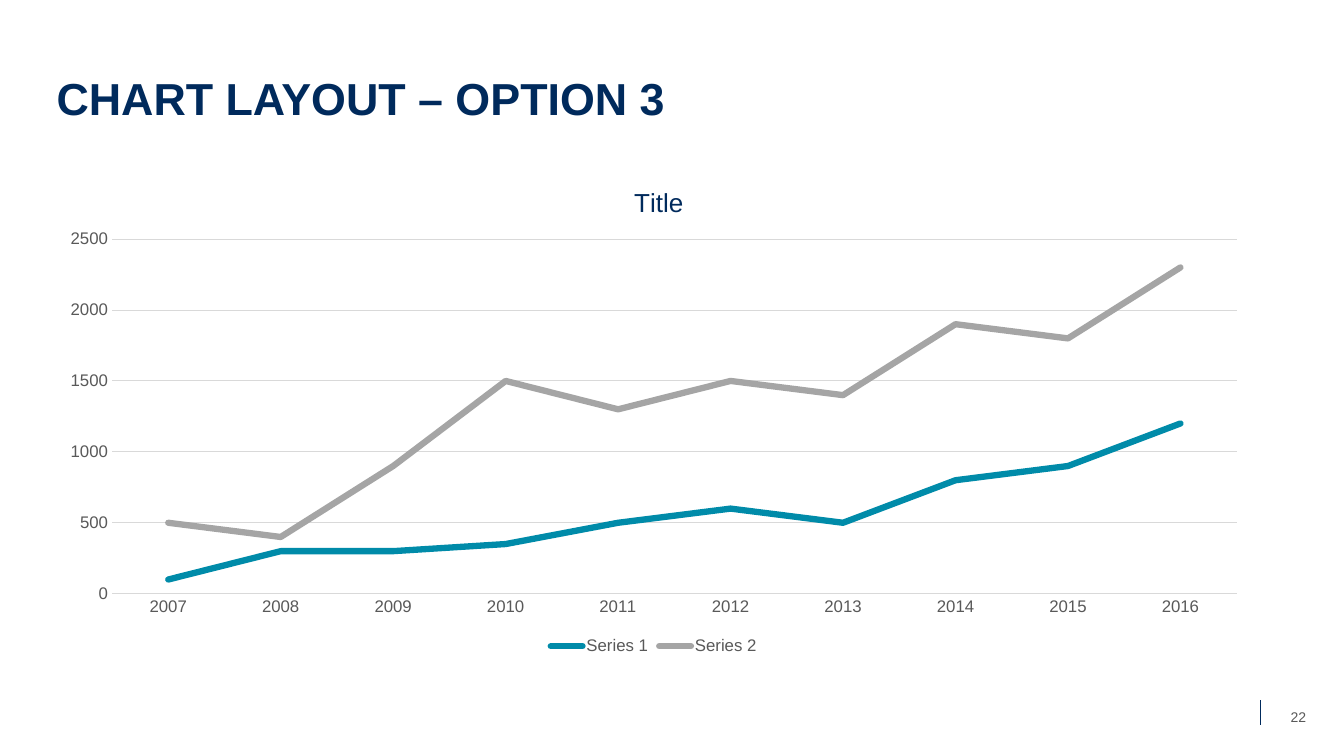
from lxml.etree import SubElement
from pptx import Presentation
from pptx.chart.data import CategoryChartData
from pptx.dml.color import RGBColor
from pptx.enum.chart import XL_CHART_TYPE as ChartType, XL_LEGEND_POSITION as LegendSide
from pptx.enum.chart import XL_MARKER_STYLE as Marker, XL_TICK_MARK as Tick
from pptx.enum.shapes import MSO_CONNECTOR as Connector
from pptx.enum.text import MSO_ANCHOR as Anchor, PP_ALIGN as Align
from pptx.oxml import parse_xml
from pptx.oxml.ns import nsdecls, qn
from pptx.util import Cm, Pt

COLORS = {"navy": "002A5C", "teal": "008BA9", "silver": "A5A5A5", "text": "595959", "grid": "D9D9D9"}
SERIES = [
    ("Series 1", "teal", [100, 300, 300, 350, 500, 600, 500, 800, 900, 1200]),
    ("Series 2", "silver", [500, 400, 900, 1500, 1300, 1500, 1400, 1900, 1800, 2300]),
]


def set_font(font, size, color, bold=False):
    font.name = "Arial"
    font.size = Pt(size)
    font.bold = bold
    font.color.rgb = RGBColor.from_string(COLORS[color])


def place_in_chart(element, index, **fractions):
    """Give a chart part a manual layout, in fractions of the chart's size."""
    for automatic in element.findall(qn("c:layout")):
        element.remove(automatic)
    layout = parse_xml(f"<c:layout {nsdecls('c')}><c:manualLayout/></c:layout>")
    for tag, value in fractions.items():
        SubElement(layout[0], qn(f"c:{tag}"), val=str(value))
    element.insert(index, layout)


deck = Presentation()
deck.slide_width, deck.slide_height = Cm(33.87), Cm(19.05)
page = deck.slides.add_slide(deck.slide_layouts[5])

# Heading
heading = page.shapes.title
heading.left, heading.top, heading.width, heading.height = Cm(1.17), Cm(0.84), Cm(26.42), Cm(2.44)
heading.text_frame.text = "CHART LAYOUT – OPTION 3"
heading.text_frame.vertical_anchor = Anchor.BOTTOM
para = heading.text_frame.paragraphs[0]
para.alignment = Align.LEFT
para.line_spacing = 0.9
set_font(para.runs[0].font, 32, "navy", bold=True)

# Page number with its divider
divider = page.shapes.add_connector(Connector.STRAIGHT, Cm(31.75), Cm(17.65), Cm(31.75), Cm(18.26))
divider.line.color.rgb = RGBColor.from_string(COLORS["navy"])
divider.line.width = Pt(0.5)
SubElement(divider._element.spPr, qn("a:effectLst"))

number = page.shapes.add_textbox(Cm(32.11), Cm(17.55), Cm(1.22), Cm(1.02))
number.text_frame.word_wrap = True
number.text_frame.text = "22"
number.text_frame.vertical_anchor = Anchor.MIDDLE
para = number.text_frame.paragraphs[0]
para.alignment = Align.CENTER
set_font(para.runs[0].font, 10, "text")

# Line chart
data = CategoryChartData(number_format="0")
data.categories = [str(year) for year in range(2007, 2017)]
for name, color, values in SERIES:
    data.add_series(name, values)
chart = page.shapes.add_chart(
    ChartType.LINE, Cm(1.17), Cm(4.04), Cm(30.61), Cm(12.57), data
).chart
set_font(chart.font, 12, "text")

chart.has_title = True
chart.chart_title.text_frame.text = "Title"
set_font(chart.chart_title.text_frame.paragraphs[0].runs[0].font, 18.6, "navy")
place_in_chart(chart.chart_title._element, 1, xMode="edge", yMode="edge", x=0.48, y=0.04)
place_in_chart(
    chart._chartSpace.chart.plotArea, 0,
    layoutTarget="inner", xMode="edge", yMode="edge", x=0.054, y=0.158, w=0.926, h=0.711,
)

chart.has_legend = True
chart.legend.position = LegendSide.BOTTOM
chart.legend.include_in_layout = False
set_font(chart.legend.font, 12, "text")

years, amounts = chart.category_axis, chart.value_axis
for axis in (years, amounts):
    axis.major_tick_mark = axis.minor_tick_mark = Tick.NONE
    set_font(axis.tick_labels.font, 12, "text")
amounts.minimum_scale, amounts.maximum_scale, amounts.major_unit = 0, 2500, 500
amounts.has_major_gridlines = True
amounts.format.line.fill.background()
for line in (years.format.line, amounts.major_gridlines.format.line):
    line.color.rgb = RGBColor.from_string(COLORS["grid"])
    line.width = Pt(0.75)

for series, (name, color, values) in zip(chart.plots[0].series, SERIES):
    series.smooth = False
    series.marker.style = Marker.NONE
    series.format.line.color.rgb = RGBColor.from_string(COLORS[color])
    series.format.line.width = Pt(4.5)
    stroke = series._element.find(f"{qn('c:spPr')}/{qn('a:ln')}")
    stroke.set("cap", "rnd")
    SubElement(stroke, qn("a:round"))

deck.save("out.pptx")
